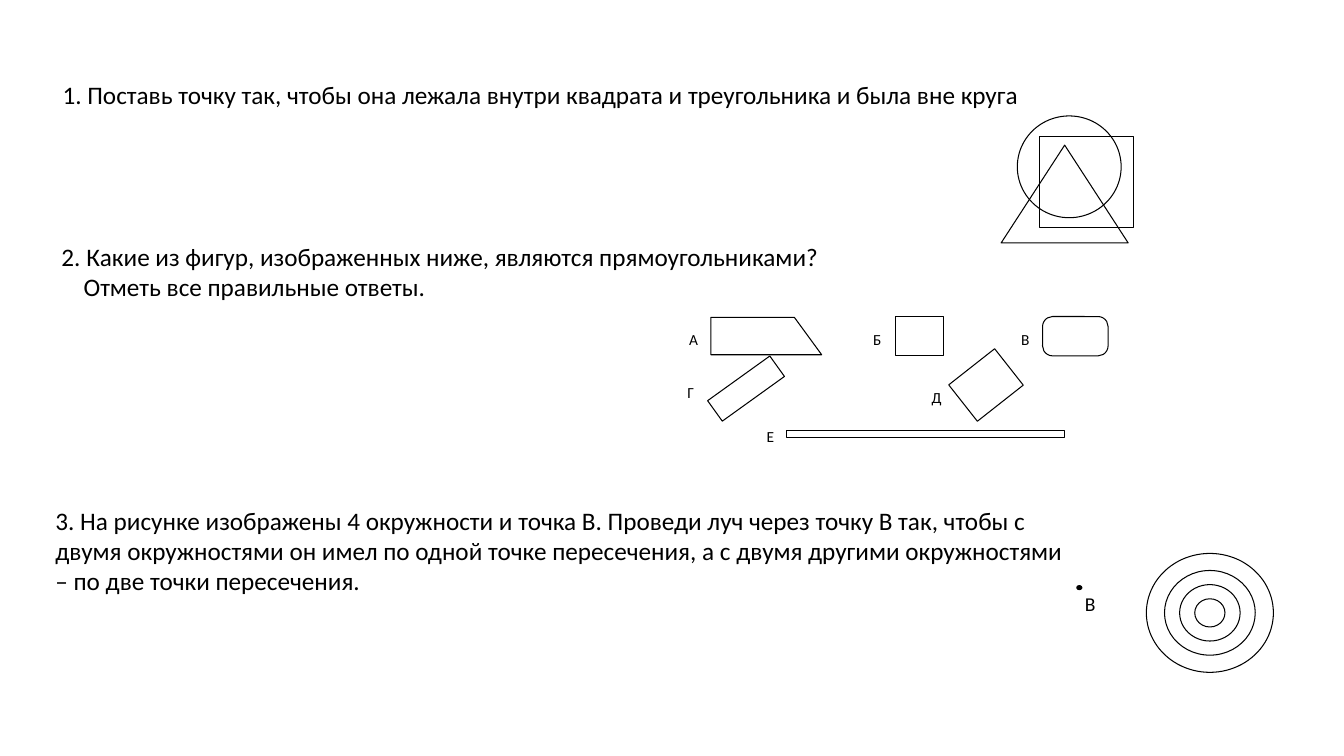
"""Build a geometry worksheet slide with three tasks and their drawings."""
from pptx import Presentation
from pptx.dml.color import RGBColor
from pptx.enum.shapes import MSO_SHAPE
from pptx.enum.text import PP_ALIGN
from pptx.util import Inches, Pt

OVAL, RECT = MSO_SHAPE.OVAL, MSO_SHAPE.RECTANGLE
ROUNDED, TRIANGLE = MSO_SHAPE.ROUNDED_RECTANGLE, MSO_SHAPE.ISOSCELES_TRIANGLE
LEFT, CENTER = PP_ALIGN.LEFT, PP_ALIGN.CENTER
FONT, BLACK, WHITE = "Calibri", "000000", "FFFFFF"
BLANK_LAYOUT = 6

TASKS = [
    (0.62, 0.79, 9.75, [
        ("1. Поставь точку так, чтобы она лежала внутри квадрата и треугольника "
         "и была вне круга", 0)]),
    (0.61, 2.39, 7.75, [
        ("2. Какие из фигур, изображенных ниже, являются прямоугольниками?", 0),
        ("Отметь все правильные ответы.", 0.22)]),
    (0.55, 5.01, 10.06, [
        ("3. На рисунке изображены 4 окружности и точка В. Проведи луч через "
         "точку В так, чтобы с двумя окружностями он имел по одной точке "
         "пересечения, а с двумя другими окружностями – по две точки "
         "пересечения.", 0)]),
]
OVERLAP = [
    (TRIANGLE, 9.93, 1.44, 1.26, 0.97, WHITE),
    (RECT, 10.31, 1.35, 0.93, 0.91, None),
    (OVAL, 10.09, 1.15, 1.03, 1.01, None),
]
CHOICES = [
    (RECT, 8.88, 3.14, 0.48, 0.39, 0),
    (ROUNDED, 10.34, 3.14, 0.65, 0.39, 0),
    (RECT, 7.8, 4.27, 2.76, 0.07, 0),
    (RECT, 7.02, 3.73, 0.76, 0.25, 324.3),
    (RECT, 9.49, 3.59, 0.58, 0.46, 321.8),
]
TRAPEZOID = [(7.05, 3.15), (7.88, 3.15), (8.15, 3.52), (7.05, 3.52)]
CHOICE_LABELS = [("А", 6.88, 3.27), ("Б", 8.7, 3.27), ("В", 10.17, 3.27),
                 ("Г", 6.85, 3.8), ("Д", 9.29, 3.85), ("Е", 7.64, 4.24)]
LABEL_SIZE = (0.18, 0.19)
RING_CENTER = (12, 6.08)
RING_SIZES = [(1.26, 1.18), (0.9, 0.84), (0.6, 0.56), (0.3, 0.28)]
POINT = (10.68, 5.81, 0.05, 0.04)


def rgb(value):
    """Turn a hex string into a colour."""
    return RGBColor.from_string(value)


def style(sp, fill=None):
    """Give a shape a thin black outline and an optional fill."""
    sp.shadow.inherit = False
    sp.line.color.rgb = rgb(BLACK)
    sp.line.width = Pt(0.75)
    if fill:
        sp.fill.solid()
        sp.fill.fore_color.rgb = rgb(fill)
    else:
        sp.fill.background()


def add_figure(s, kind, x, y, w, h, fill=None, rotation=0):
    """Add an outlined preset shape, placed in inches."""
    sp = s.shapes.add_shape(kind, Inches(x), Inches(y), Inches(w), Inches(h))
    style(sp, fill)
    sp.rotation = rotation
    if kind == ROUNDED:
        sp.adjustments[0] = 0.255
    return sp


def add_text(s, x, y, w, h, paragraphs, size, align=LEFT):
    """Add a text box without insets; each paragraph is text and indent."""
    sp = s.shapes.add_textbox(Inches(x), Inches(y), Inches(w), Inches(h))
    tf = sp.text_frame
    tf.word_wrap = True
    tf.margin_left = tf.margin_right = tf.margin_top = tf.margin_bottom = 0
    for i, (text, indent) in enumerate(paragraphs):
        p = tf.add_paragraph() if i else tf.paragraphs[0]
        p.alignment = align
        if indent:
            p._p.get_or_add_pPr().set("marL", str(Inches(indent)))
        r = p.add_run()
        r.text = text
        r.font.name = FONT
        r.font.size = Pt(size)
        r.font.color.rgb = rgb(BLACK)


def main():
    """Create the slide and save it."""
    prs = Presentation()
    prs.slide_width, prs.slide_height = Inches(13.33), Inches(7.5)
    s = prs.slides.add_slide(prs.slide_layouts[BLANK_LAYOUT])

    for w, h in RING_SIZES:
        cx, cy = RING_CENTER
        add_figure(s, OVAL, cx - w / 2, cy - h / 2, w, h)
    add_figure(s, OVAL, *POINT, fill=BLACK)
    add_text(s, 10.76, 5.87, 0.2, 0.24, [("В", 0)], 14)

    for figure in OVERLAP:
        add_figure(s, *figure)

    for *figure, rotation in CHOICES:
        add_figure(s, *figure, fill=WHITE, rotation=rotation)
    corners = [(Inches(x), Inches(y)) for x, y in TRAPEZOID]
    outline = s.shapes.build_freeform(*corners[0])
    outline.add_line_segments(corners[1:], close=True)
    style(outline.convert_to_shape())
    w, h = LABEL_SIZE
    for letter, cx, y in CHOICE_LABELS:
        add_text(s, cx - w / 2, y, w, h, [(letter, 0)], 11, CENTER)

    for x, y, w, paragraphs in TASKS:
        add_text(s, x, y, w, 0.9, paragraphs, 18)
    prs.save("out.pptx")


if __name__ == "__main__":
    main()
